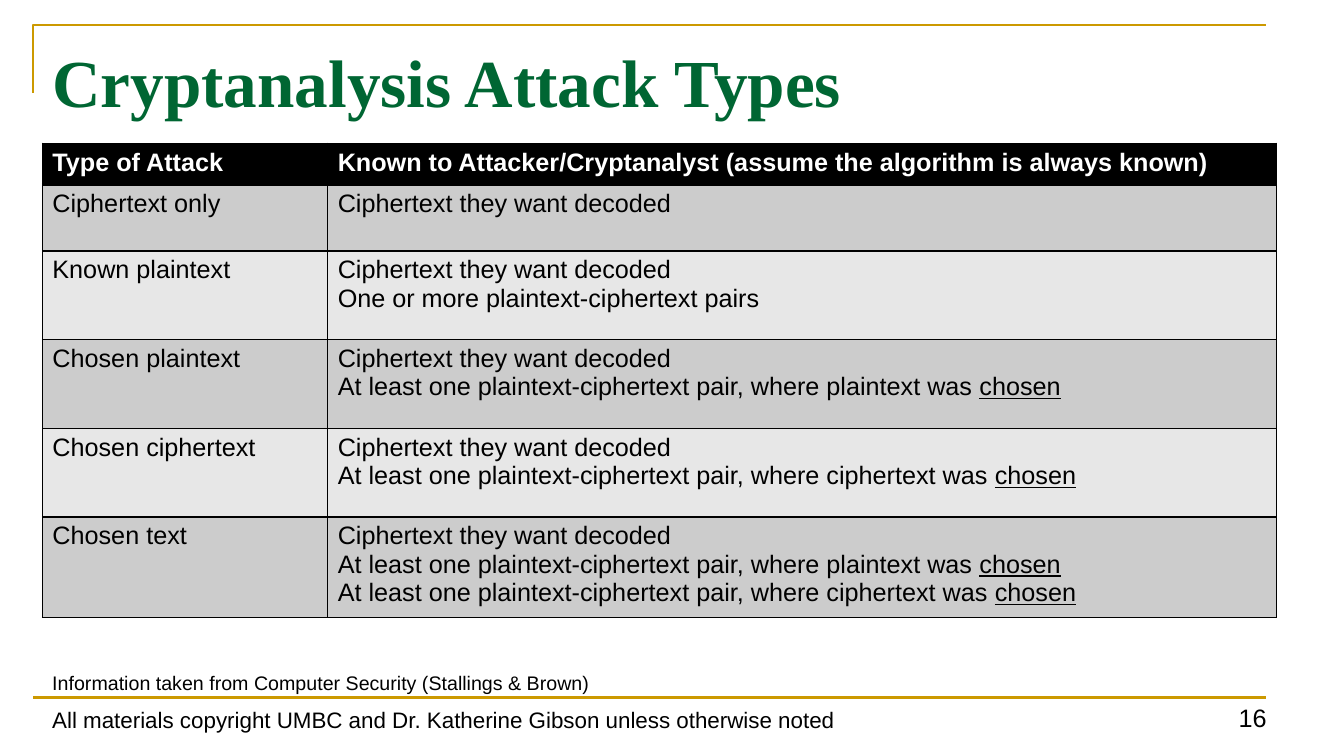
from dataclasses import dataclass
from lxml import etree
from pptx import Presentation, util as u
from pptx.dml import color
from pptx.enum import shapes, text
from pptx.oxml import ns

GOLD, BLACK, WHITE, GREEN = "CC9900", "000000", "FFFFFF", "006633"
BANDS = ("CCCCCC", "E7E7E7")
MARK = "chosen"
WANT = "Ciphertext they want decoded"
PAIR = "At least one plaintext-ciphertext pair, where {} was chosen"
PLAIN, CIPHER = PAIR.format("plaintext"), PAIR.format("ciphertext")


@dataclass
class Label:
    words: str
    left: float
    top: float
    wide: float
    high: float
    size: int
    face: str = "Arial"
    tint: str = BLACK
    bold: bool = False
    anchor: text.MSO_ANCHOR = text.MSO_ANCHOR.BOTTOM
    align: text.PP_ALIGN = text.PP_ALIGN.LEFT
    pitch: float = 1.0


@dataclass
class Row:
    kind: str
    known: tuple[str, ...]
    high: float


LABELS = [
    Label("All materials copyright UMBC and Dr. Katherine Gibson unless otherwise noted",
          0.42, 6.83, 10.33, 0.49, 16),
    Label("16", 11.22, 6.83, 1.44, 0.49, 18, align=text.PP_ALIGN.RIGHT),
    Label("Cryptanalysis Attack Types", 0.42, 0.3, 12.24, 1.11, 48, "Times New Roman",
          GREEN, True, text.MSO_ANCHOR.MIDDLE, pitch=0.9),
    Label("Information taken from Computer Security (Stallings & Brown)",
          0.42, 6.45, 10.33, 0.49, 14),
]
ROWS = [
    Row("Type of Attack",
        ("Known to Attacker/Cryptanalyst (assume the algorithm is always known)",), 0.41),
    Row("Ciphertext only", (WANT,), 0.66),
    Row("Known plaintext", (WANT, "One or more plaintext-ciphertext pairs"), 0.88),
    Row("Chosen plaintext", (WANT, PLAIN), 0.88),
    Row("Chosen ciphertext", (WANT, CIPHER), 0.88),
    Row("Chosen text", (WANT, PLAIN, CIPHER), 0.93),
]
COLS = (2.83, 9.41)


def rgb(code: str) -> color.RGBColor:
    return color.RGBColor.from_string(code)


def apply(item, form: dict) -> None:
    for key, value in form.items():
        setattr(item, key, value)


def style(font, face: str, size: int, tint: str, bold: bool) -> None:
    apply(font, {"name": face, "size": u.Pt(size), "bold": bold})
    font.color.rgb = rgb(tint)


def stroke(line) -> None:
    line.color.rgb = rgb(GOLD)
    line.width = u.Pt(1.5)


def frame(slide) -> None:
    pen = slide.shapes.build_freeform(u.Inches(0.33), u.Inches(0.92))
    pen.add_line_segments([(u.Inches(x), u.Inches(0.25)) for x in (0.33, 12.56)], close=False)
    edge = pen.convert_to_shape()
    edge.shadow.inherit = False
    edge.fill.background()
    stroke(edge.line)
    rule = slide.shapes.add_connector(
        shapes.MSO_CONNECTOR.STRAIGHT,
        *(u.Inches(n) for n in (0.33, 6.92, 12.56, 6.92)))
    stroke(rule.line)
    etree.SubElement(rule._element.spPr, ns.qn("a:effectLst"))


def write(slide, label: Label) -> None:
    box = slide.shapes.add_textbox(
        *(u.Inches(n) for n in (label.left, label.top, label.wide, label.high)))
    apply(box.text_frame, {"word_wrap": True, "vertical_anchor": label.anchor})
    para = box.text_frame.paragraphs[0]
    apply(para, {"alignment": label.align, "line_spacing": label.pitch})
    run = para.add_run()
    run.text = label.words
    style(run.font, label.face, label.size, label.tint, label.bold)


def border(cell, widths: dict[str, float]) -> None:
    props = cell._tc.get_or_add_tcPr()
    for side, width in widths.items():
        line = etree.SubElement(props, ns.qn(f"a:ln{side}"), w=str(u.Pt(width)))
        fill = etree.SubElement(line, ns.qn("a:solidFill"))
        etree.SubElement(fill, ns.qn("a:srgbClr"), val=BLACK)


def fill(cell, lines: tuple[str, ...], rank: int) -> None:
    head = rank == 0
    border(cell, {"L": 1, "R": 1, "T": 3 if rank == 1 else 1, "B": 3 if head else 1})
    cell.fill.solid()
    cell.fill.fore_color.rgb = rgb(BLACK if head else BANDS[(rank - 1) % 2])
    for spot, line in enumerate(lines):
        body = cell.text_frame
        para = body.add_paragraph() if spot else body.paragraphs[0]
        for part in filter(None, line.partition(MARK)):
            run = para.add_run()
            run.text = part
            style(run.font, "Arial", 18, WHITE if head else BLACK, head)
            run.font.underline = part == MARK


def grid(slide) -> None:
    high = sum(row.high for row in ROWS)
    table = slide.shapes.add_table(
        len(ROWS), len(COLS),
        *(u.Inches(n) for n in (0.42, 1.42, sum(COLS), high))).table
    for col, wide in zip(table.columns, COLS):
        col.width = u.Inches(wide)
    for rank, row in enumerate(ROWS):
        table.rows[rank].height = u.Inches(row.high)
        for spot, lines in enumerate(((row.kind,), row.known)):
            fill(table.cell(rank, spot), lines, rank)


def main() -> None:
    deck = Presentation()
    apply(deck, {"slide_width": u.Inches(13.33), "slide_height": u.Inches(7.5)})
    slide = deck.slides.add_slide(deck.slide_layouts[6])
    frame(slide)
    for label in LABELS:
        write(slide, label)
    grid(slide)
    deck.save("out.pptx")


if __name__ == "__main__":
    main()
